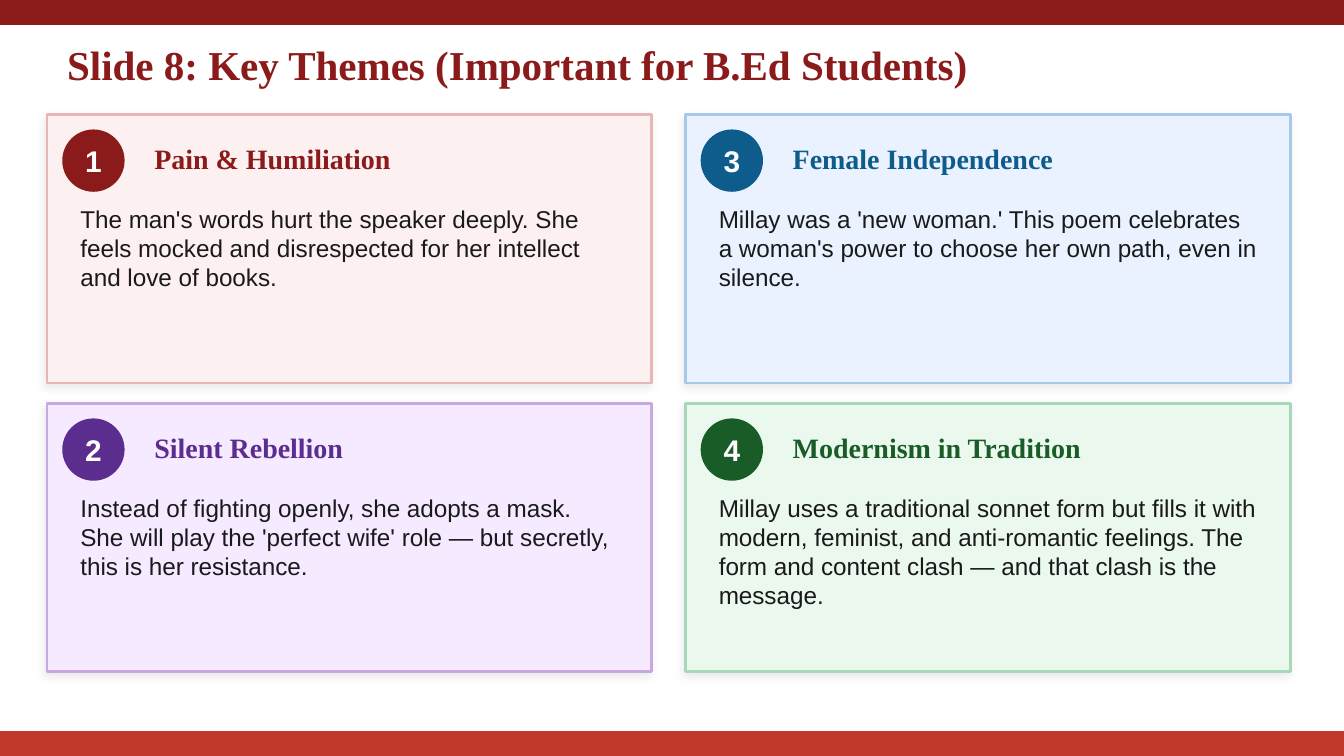
from dataclasses import dataclass

from lxml.etree import SubElement
from pptx import Presentation
from pptx.dml.color import RGBColor
from pptx.enum.shapes import MSO_SHAPE
from pptx.enum.text import MSO_ANCHOR, PP_ALIGN
from pptx.oxml.ns import qn
from pptx.shapes.autoshape import Shape
from pptx.slide import Slide
from pptx.util import Inches, Pt

SERIF = "Times New Roman"
SANS = "Arial"
DARK_RED = "8B1A1A"
BRIGHT_RED = "C0392B"
INK = "1A1A1A"
WHITE = "FFFFFF"

SLIDE_WIDTH = 10
SLIDE_HEIGHT = SLIDE_WIDTH * 9 / 16
BAR_HEIGHT = 0.18
GRID_LEFT, GRID_TOP = 0.35, 0.85
CARD_WIDTH, CARD_HEIGHT = 4.5, 2
COLUMN_STEP, ROW_STEP = 4.75, 2.15
BADGE_SIZE = 0.45


@dataclass
class Box:
    left: float
    top: float
    width: float
    height: float


@dataclass
class Theme:
    heading: str
    body: str
    accent: str
    background: str
    border: str


THEMES = [
    Theme(
        "Pain & Humiliation",
        "The man's words hurt the speaker deeply. She feels mocked and "
        "disrespected for her intellect and love of books.",
        DARK_RED, "FDF0F0", "E8B4B4",
    ),
    Theme(
        "Silent Rebellion",
        "Instead of fighting openly, she adopts a mask. She will play the "
        "'perfect wife' role — but secretly, this is her resistance.",
        "5B2D8E", "F5EAFF", "C8A8E0",
    ),
    Theme(
        "Female Independence",
        "Millay was a 'new woman.' This poem celebrates a woman's power to "
        "choose her own path, even in silence.",
        "0D5C8C", "EAF2FF", "A8C8E8",
    ),
    Theme(
        "Modernism in Tradition",
        "Millay uses a traditional sonnet form but fills it with modern, "
        "feminist, and anti-romantic feelings. The form and content clash — "
        "and that clash is the message.",
        "1A5C28", "EAF8ED", "A8D8B8",
    ),
]


def color(value: str) -> RGBColor:
    return RGBColor.from_string(value)


def place(shape: Shape, box: Box) -> None:
    shape.left, shape.top = Inches(box.left), Inches(box.top)
    shape.width, shape.height = Inches(box.width), Inches(box.height)


def write(shape: Shape, text: str, size: float, font_name: str, ink: str,
          bold: bool = True, alignment: PP_ALIGN = PP_ALIGN.LEFT,
          anchor: MSO_ANCHOR = MSO_ANCHOR.MIDDLE) -> None:
    frame = shape.text_frame
    frame.word_wrap = True
    frame.vertical_anchor = anchor
    paragraph = frame.paragraphs[0]
    paragraph.text = text
    paragraph.alignment = alignment
    paragraph.font.size = Pt(size)
    paragraph.font.name = font_name
    paragraph.font.bold = bold
    paragraph.font.color.rgb = color(ink)


def add_text(slide: Slide, box: Box) -> Shape:
    shape = slide.shapes.add_textbox(0, 0, 0, 0)
    place(shape, box)
    return shape


def add_filled(slide: Slide, kind: MSO_SHAPE, box: Box, fill: str,
               line: str, line_width: float = 1) -> Shape:
    shape = slide.shapes.add_shape(kind, 0, 0, 0, 0)
    place(shape, box)
    shape.shadow.inherit = False
    shape.fill.solid()
    shape.fill.fore_color.rgb = color(fill)
    shape.line.color.rgb = color(line)
    shape.line.width = Pt(line_width)
    return shape


def add_soft_shadow(shape: Shape) -> None:
    effects = shape.element.spPr.find(qn("a:effectLst"))
    shadow = SubElement(effects, qn("a:outerShdw"), blurRad=str(Pt(5)),
                        dist=str(Pt(2)), dir=str(135 * 60000),
                        algn="bl", rotWithShape="0")
    shade = SubElement(shadow, qn("a:srgbClr"), val="000000")
    SubElement(shade, qn("a:alpha"), val="8000")


def add_card(slide: Slide, number: int, theme: Theme, left: float, top: float) -> None:
    card = add_filled(slide, MSO_SHAPE.RECTANGLE,
                      Box(left, top, CARD_WIDTH, CARD_HEIGHT),
                      theme.background, theme.border, 1.5)
    add_soft_shadow(card)

    badge = add_filled(slide, MSO_SHAPE.OVAL,
                       Box(left + 0.12, top + 0.12, BADGE_SIZE, BADGE_SIZE),
                       theme.accent, theme.accent)
    frame = badge.text_frame
    frame.margin_left = frame.margin_right = 0
    frame.margin_top = frame.margin_bottom = 0
    write(badge, str(number), 16, SANS, WHITE, alignment=PP_ALIGN.CENTER)

    heading = add_text(slide, Box(left + 0.7, top + 0.14, 3.7, 0.38))
    write(heading, theme.heading, 15, SERIF, theme.accent)

    body = add_text(slide, Box(left + 0.15, top + 0.62, 4.2, 1.25))
    write(body, theme.body, 13, SANS, INK, bold=False, anchor=MSO_ANCHOR.TOP)


def main() -> None:
    presentation = Presentation()
    presentation.slide_width = Inches(SLIDE_WIDTH)
    presentation.slide_height = Inches(SLIDE_HEIGHT)
    slide = presentation.slides.add_slide(presentation.slide_layouts[5])

    for top, fill in ((0, DARK_RED), (SLIDE_HEIGHT - BAR_HEIGHT, BRIGHT_RED)):
        add_filled(slide, MSO_SHAPE.RECTANGLE,
                   Box(0, top, SLIDE_WIDTH, BAR_HEIGHT), fill, fill)

    title = slide.shapes.title
    place(title, Box(0.4, 0.25, 9.2, 0.45))
    write(title, "Slide 8: Key Themes (Important for B.Ed Students)", 22, SERIF, DARK_RED)

    for index, theme in enumerate(THEMES):
        column, row = divmod(index, 2)
        add_card(slide, index + 1, theme,
                 GRID_LEFT + column * COLUMN_STEP, GRID_TOP + row * ROW_STEP)

    presentation.save("out.pptx")


if __name__ == "__main__":
    main()
